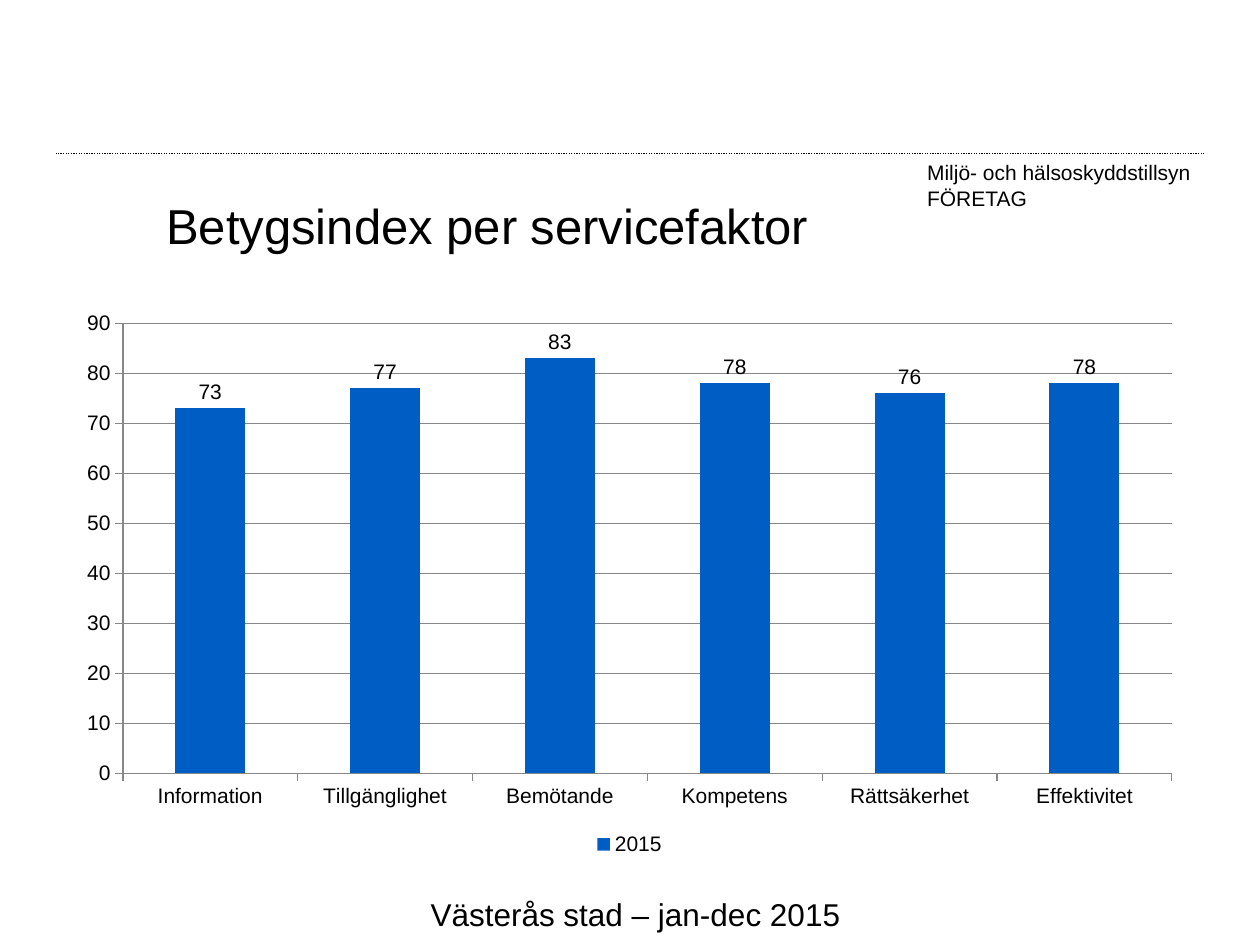
from dataclasses import dataclass

from lxml.etree import SubElement
from pptx import Presentation
from pptx.chart.data import CategoryChartData
from pptx.dml.color import RGBColor
from pptx.enum.chart import XL_CHART_TYPE as ChartType
from pptx.enum.chart import XL_LABEL_POSITION as LabelPosition
from pptx.enum.chart import XL_LEGEND_POSITION as LegendPosition
from pptx.enum.chart import XL_TICK_MARK as TickMark
from pptx.enum.dml import MSO_LINE_DASH_STYLE as Dash
from pptx.enum.shapes import MSO_CONNECTOR as Connector
from pptx.enum.text import MSO_ANCHOR as Anchor
from pptx.enum.text import MSO_AUTO_SIZE as AutoSize
from pptx.enum.text import PP_ALIGN as Align
from pptx.oxml.ns import qn
from pptx.slide import Slide
from pptx.util import Cm, Pt

BLACK = RGBColor(0x00, 0x00, 0x00)
GRAY = RGBColor(0x87, 0x87, 0x87)
BLUE = RGBColor(0x00, 0x5D, 0xC4)
FONT = "Arial"

SCORES = {
    "Information": 73,
    "Tillgänglighet": 77,
    "Bemötande": 83,
    "Kompetens": 78,
    "Rättsäkerhet": 76,
    "Effektivitet": 78,
}


@dataclass(frozen=True)
class Label:
    lines: tuple[str, ...]
    left: float
    top: float
    width: float
    height: float
    size: int


LABELS = (
    Label(("Västerås stad – jan-dec 2015",), 8.43, 17.91, 8.84, 1.02, 18),
    Label(("Miljö- och hälsoskyddstillsyn", "FÖRETAG"), 18.44, 3.1, 5.87, 1.27, 12),
)


def set_all(target: object, values: dict) -> None:
    for name, value in values.items():
        setattr(target, name, value)


def style_font(font: object, size: int) -> None:
    set_all(font, {"name": FONT, "size": Pt(size), "bold": False})
    font.color.rgb = BLACK


def add_label(page: Slide, label: Label) -> None:
    box = page.shapes.add_textbox(
        Cm(label.left), Cm(label.top), Cm(label.width), Cm(label.height)
    )
    frame = box.text_frame
    set_all(frame, {"word_wrap": False, "auto_size": AutoSize.SHAPE_TO_FIT_TEXT})
    for index, line in enumerate(label.lines):
        para = frame.add_paragraph() if index else frame.paragraphs[0]
        para.text = line
        style_font(para.font, label.size)


def add_title(page: Slide, text: str) -> None:
    title = page.shapes.title
    set_all(title, {"left": Cm(3.1), "top": Cm(3.94), "width": Cm(21.2), "height": Cm(1.2)})
    frame = title.text_frame
    set_all(frame, {"vertical_anchor": Anchor.MIDDLE, "auto_size": AutoSize.NONE})
    para = frame.paragraphs[0]
    set_all(para, {"text": text, "alignment": Align.LEFT})
    style_font(para.font, 28)


def add_dotted_rule(page: Slide) -> None:
    rule = page.shapes.add_connector(
        Connector.STRAIGHT, Cm(24.28), Cm(3.1), Cm(1.12), Cm(3.1)
    )
    set_all(rule.line, {"width": Pt(0.75), "dash_style": Dash.ROUND_DOT})
    rule.line.color.rgb = BLACK
    SubElement(rule._element.spPr, qn("a:effectLst"))


def add_score_chart(page: Slide) -> None:
    data = CategoryChartData(number_format="0")
    data.categories = list(SCORES)
    data.add_series("2015", list(SCORES.values()))
    chart = page.shapes.add_chart(
        ChartType.COLUMN_CLUSTERED, Cm(1.3), Cm(6.07), Cm(22.78), Cm(11.28), data
    ).chart
    set_all(chart, {"has_title": False, "has_legend": True})
    style_font(chart.font, 18)
    set_all(chart.legend, {"position": LegendPosition.BOTTOM, "include_in_layout": False})
    style_font(chart.legend.font, 12)

    for axis in (chart.category_axis, chart.value_axis):
        axis.major_tick_mark = TickMark.OUTSIDE
        axis.format.line.color.rgb = GRAY
        style_font(axis.tick_labels.font, 12)
    values = chart.value_axis
    set_all(values, {
        "minimum_scale": 0,
        "maximum_scale": 90,
        "major_unit": 10,
        "has_major_gridlines": True,
    })
    values.major_gridlines.format.line.color.rgb = GRAY
    set_all(values.tick_labels, {"number_format": "0", "number_format_is_linked": False})

    plot = chart.plots[0]
    set_all(plot, {"gap_width": 150, "vary_by_categories": False, "has_data_labels": True})
    set_all(plot.data_labels, {
        "show_value": True,
        "position": LabelPosition.OUTSIDE_END,
        "number_format": "0",
        "number_format_is_linked": False,
    })
    style_font(plot.data_labels.font, 12)
    fill = plot.series[0].format.fill
    fill.solid()
    fill.fore_color.rgb = BLUE


def main() -> None:
    deck = Presentation()
    set_all(deck, {"slide_width": Cm(25.4), "slide_height": Cm(19.05)})
    page = deck.slides.add_slide(deck.slide_layouts.get_by_name("Title Only"))
    add_dotted_rule(page)
    add_score_chart(page)
    add_title(page, "Betygsindex per servicefaktor")
    for label in LABELS:
        add_label(page, label)
    deck.save("out.pptx")


if __name__ == "__main__":
    main()
